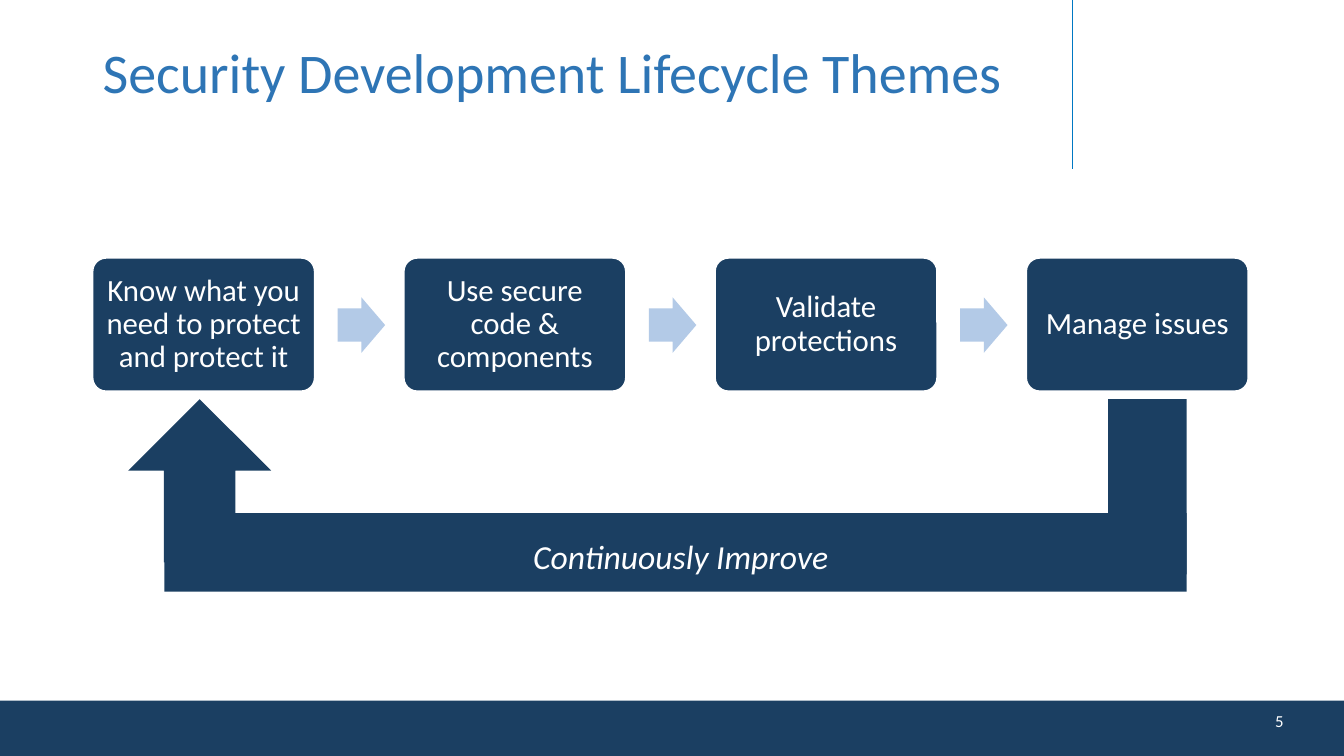
from dataclasses import dataclass

import lxml.etree
import pptx
import pptx.dml.color
import pptx.enum.shapes
import pptx.enum.text
import pptx.oxml.ns
import pptx.shapes.autoshape
import pptx.slide
import pptx.text.text
import pptx.util

RGBColor = pptx.dml.color.RGBColor
Inches = pptx.util.Inches
Shape = pptx.enum.shapes.MSO_SHAPE
Align = pptx.enum.text.PP_ALIGN
Anchor = pptx.enum.text.MSO_ANCHOR

NAVY = RGBColor(0x1B, 0x3F, 0x62)
PALE_BLUE = RGBColor(0xB3, 0xCA, 0xE7)
TITLE_BLUE = RGBColor(0x2E, 0x75, 0xB5)
RULE_BLUE = RGBColor(0x00, 0x78, 0xC3)
WHITE = RGBColor(0xFF, 0xFF, 0xFF)

THEMES = [
    "Know what you need to protect and protect it",
    "Use secure code & components",
    "Validate protections",
    "Manage issues",
]
FIRST_LEFT, LAST_LEFT = 0.92, 10.18
THEME_PITCH = (LAST_LEFT - FIRST_LEFT) / (len(THEMES) - 1)
ARROW_OFFSET = 2.43


@dataclass(frozen=True)
class Box:
    left: float
    top: float
    width: float
    height: float

    def lengths(self) -> list[pptx.util.Length]:
        return [Inches(v) for v in (self.left, self.top, self.width, self.height)]


@dataclass(frozen=True)
class Block:
    kind: Shape
    box: Box
    fill: RGBColor = NAVY
    adjustments: tuple[float, ...] = ()


@dataclass(frozen=True)
class Label:
    text: str
    size: float
    color: RGBColor = WHITE
    italic: bool = False
    align: Align = Align.LEFT
    anchor: Anchor = Anchor.TOP
    spacing: float = 1.0
    inset_x: float = 0.1
    inset_y: float = 0.05


def apply_format(target: object, values: dict[str, object]) -> None:
    for attribute, value in values.items():
        setattr(target, attribute, value)


def write_label(frame: pptx.text.text.TextFrame, label: Label) -> None:
    apply_format(frame, {
        "word_wrap": True,
        "vertical_anchor": label.anchor,
        "margin_left": Inches(label.inset_x),
        "margin_right": Inches(label.inset_x),
        "margin_top": Inches(label.inset_y),
        "margin_bottom": Inches(label.inset_y),
    })
    paragraph = frame.paragraphs[0]
    apply_format(paragraph, {"alignment": label.align, "line_spacing": label.spacing})
    run = paragraph.add_run()
    run.text = label.text
    apply_format(run.font, {
        "name": "Calibri",
        "size": pptx.util.Pt(label.size),
        "italic": label.italic,
    })
    run.font.color.rgb = label.color


def draw_block(slide: pptx.slide.Slide, block: Block) -> pptx.shapes.autoshape.Shape:
    drawn = slide.shapes.add_shape(block.kind, *block.box.lengths())
    drawn.shadow.inherit = False
    drawn.fill.solid()
    drawn.fill.fore_color.rgb = block.fill
    drawn.line.fill.background()
    for index, value in enumerate(block.adjustments):
        drawn.adjustments[index] = value
    return drawn


def draw_text(slide: pptx.slide.Slide, box: Box, label: Label) -> None:
    write_label(slide.shapes.add_textbox(*box.lengths()).text_frame, label)


def draw_title_rule(slide: pptx.slide.Slide) -> None:
    rule = slide.shapes.add_connector(
        pptx.enum.shapes.MSO_CONNECTOR.STRAIGHT,
        Inches(10.64), Inches(0), Inches(10.64), Inches(1.68),
    )
    rule.line.color.rgb = RULE_BLUE
    rule.line.width = pptx.util.Pt(0.75)
    properties = rule._element.find(pptx.oxml.ns.qn("p:spPr"))
    lxml.etree.SubElement(properties, pptx.oxml.ns.qn("a:effectLst"))


def draw_theme(slide: pptx.slide.Slide, left: float, text: str) -> None:
    card = draw_block(
        slide, Block(Shape.ROUNDED_RECTANGLE, Box(left, 2.56, 2.2, 1.32), adjustments=(0.1,))
    )
    card.line.color.rgb = WHITE
    card.line.width = pptx.util.Pt(1)
    write_label(card.text_frame, Label(
        text, 22, align=Align.CENTER, anchor=Anchor.MIDDLE,
        spacing=0.9, inset_x=0.08, inset_y=0.08,
    ))


def main() -> None:
    presentation = pptx.Presentation()
    apply_format(presentation, {"slide_width": Inches(13.33), "slide_height": Inches(7.5)})
    slide = presentation.slides.add_slide(presentation.slide_layouts[6])

    draw_block(slide, Block(Shape.RECTANGLE, Box(0, 6.95, 13.33, 0.55)))
    draw_title_rule(slide)
    draw_text(
        slide, Box(0.92, 0.4, 9.56, 1.28),
        Label("Security Development Lifecycle Themes", 40, TITLE_BLUE, spacing=0.9),
    )
    draw_text(
        slide, Box(12.47, 6.95, 0.44, 0.4),
        Label("5", 12, align=Align.CENTER, anchor=Anchor.MIDDLE),
    )

    for index, theme in enumerate(THEMES):
        left = FIRST_LEFT + index * THEME_PITCH
        draw_theme(slide, left, theme)
        if index < len(THEMES) - 1:
            draw_block(slide, Block(
                Shape.RIGHT_ARROW, Box(left + ARROW_OFFSET, 2.95, 0.47, 0.55),
                PALE_BLUE, (0.6, 0.5),
            ))

    feedback_loop = [
        Block(Shape.RECTANGLE, Box(10.99, 3.96, 0.78, 1.74)),
        Block(Shape.UP_ARROW, Box(1.27, 3.96, 1.42, 1.62), adjustments=(0.5, 0.5)),
        Block(Shape.RECTANGLE, Box(1.63, 5.09, 10.14, 0.78)),
    ]
    for part in feedback_loop:
        draw_block(slide, part)
    draw_text(slide, Box(5.19, 5.27, 3.2, 0.5), Label("Continuously Improve", 24, italic=True))

    presentation.save("out.pptx")


if __name__ == "__main__":
    main()
